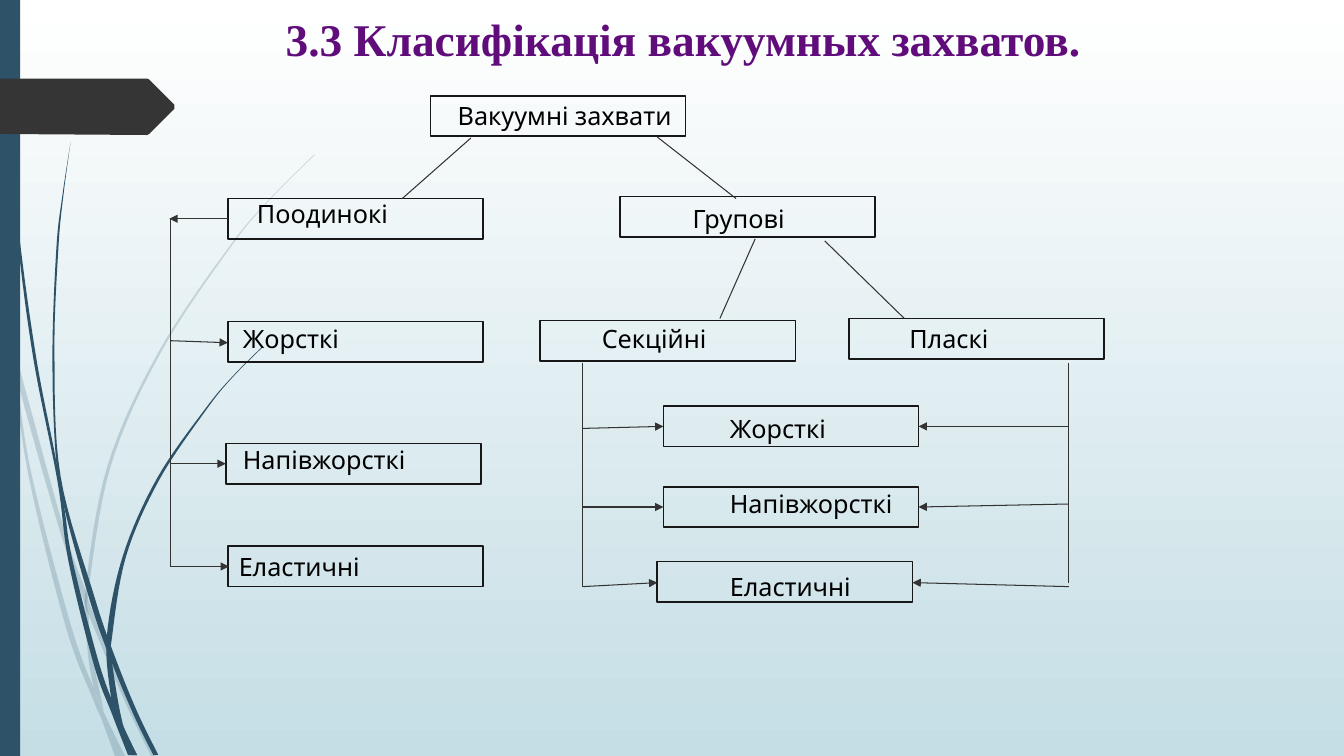
import pptx
import pptx.dml.color
import pptx.enum.shapes
import pptx.enum.text
import pptx.oxml.ns
import pptx.util
from lxml import etree

PX = 9144  # EMU; 100 px to the inch
PAGE_WIDTH, PAGE_HEIGHT = 1333, 750
COLORS = {
    "sky": "FFFFFF", "ground": "C5DEE5", "stem": "2E5369", "tag": "353535",
    "title": "600D7B", "text": "000000", "frame": "171717", "line": "333333",
}
TITLE = "3.3 Класифікація вакуумных захватов."
BOX_SIZE = (253, 40)
LABEL_SIZE = (285, 40)

# text, box left and top, label left and top
BOXES = [
    ("Вакуумні захвати", (427, 95), (444, 95)),
    ("Поодинокі", (226, 197), (245, 192)),
    ("Групові", (615, 195), (677, 197)),
    ("Жорсткі", (226, 319), (231, 316)),
    ("Напівжорсткі", (224, 440), (231, 436)),
    ("Еластичні", (226, 542), (227, 542)),
    ("Секційні", (536, 318), (587, 316)),
    ("Пласкі", (842, 316), (892, 316)),
    ("Жорсткі", (658, 403), (714, 405)),
    ("Напівжорсткі", (658, 483), (714, 480)),
    ("Еластичні", (652, 557), (714, 562)),
]
LINES = [
    ((467, 137), (399, 197)), ((652, 136), (730, 197)),
    ((749, 237), (714, 316)), ((818, 239), (897, 316)),
    ((169, 217), (169, 562)), ((578, 360), (578, 582)), ((1060, 360), (1060, 578)),
]
ARROWS = [
    ((226, 217), (168, 217)),
    ((169, 338), (226, 340)), ((169, 460), (224, 460)), ((169, 562), (227, 562)),
    ((578, 425), (658, 423)), ((578, 503), (658, 503)), ((578, 582), (652, 578)),
    ((1060, 423), (911, 423)), ((1060, 500), (911, 503)), ((1060, 582), (905, 578)),
]

# each stem: one edge downwards, the other edge upwards
PALE_STEMS = [
    ([(14, 345), (17, 376), (58, 522), (84, 599), (88, 610), (123, 694), (150, 750)],
     [(155, 750), (127, 692), (92, 607), (85, 586), (62, 520), (14, 345)]),
    ([(11, 350), (28, 470), (65, 621), (92, 693), (101, 714), (114, 750)],
     [(124, 750), (105, 711), (93, 683), (70, 619), (31, 469), (17, 376)]),
    ([(312, 153), (268, 197), (228, 244), (158, 348), (107, 461), (85, 584),
      (87, 646), (93, 683)],
     [(103, 706), (91, 646), (88, 610), (88, 584), (110, 462), (160, 349),
      (229, 245), (268, 198), (312, 154)]),
]
DARK_STEMS = [
    ([(3, 0), (7, 110), (17, 233), (33, 355), (57, 477), (68, 557), (93, 659),
      (111, 708), (127, 749)],
     [(136, 749), (116, 706), (98, 657), (72, 556), (64, 505), (55, 453),
      (36, 355), (19, 232), (8, 109), (4, 0)]),
    ([(70, 141), (62, 193), (56, 245), (52, 349), (55, 449), (64, 505), (88, 592),
      (106, 645), (132, 708), (152, 749)],
     [(157, 749), (136, 706), (113, 649), (93, 590), (60, 472), (54, 349),
      (58, 245), (63, 193), (70, 141)]),
    ([(260, 344), (231, 373), (204, 405), (156, 474), (122, 551), (106, 631),
      (110, 691), (117, 722), (130, 749)],
     [(136, 749), (122, 719), (111, 656), (111, 633), (125, 552), (158, 476),
      (205, 406), (231, 374), (261, 344)]),
]
TAG = [(0, 78), (146, 78), (148, 79), (173, 104), (173, 108), (148, 133), (146, 134), (0, 133)]


def color(name):
    return pptx.dml.color.RGBColor.from_string(COLORS[name])


def emu(*lengths):
    return [round(length * PX) for length in lengths]


def smooth_edge(points, steps=8):
    """Return points along a Catmull-Rom curve through the given points."""
    padded = [points[0], *points, points[-1]]
    curve = []
    for a, b, c, d in zip(padded, padded[1:], padded[2:], padded[3:]):
        for step in range(steps):
            t = step / steps
            curve.append(tuple(
                (2 * q + (r - p) * t + (2 * p - 5 * q + 4 * r - s) * t ** 2
                 + (3 * q - p - 3 * r + s) * t ** 3) / 2
                for p, q, r, s in zip(a, b, c, d)))
    return curve + [points[-1]]


def paint(shape, fill):
    shape.shadow.inherit = False
    shape.fill.solid()
    shape.fill.fore_color.rgb = color(fill)
    shape.line.fill.background()


def add_outline(page, points, fill, alpha=None):
    corners = [emu(*point) for point in points]
    builder = page.shapes.build_freeform(*corners[0], scale=1.0)
    builder.add_line_segments(corners[1:], close=True)
    shape = builder.convert_to_shape()
    paint(shape, fill)
    if alpha:
        tint = next(shape._element.spPr.iter(pptx.oxml.ns.qn("a:srgbClr")))
        etree.SubElement(tint, pptx.oxml.ns.qn("a:alpha"), val=str(alpha * 1000))


def add_line(page, start, end, arrow=False):
    line = page.shapes.add_connector(
        pptx.enum.shapes.MSO_CONNECTOR.STRAIGHT, *emu(*start, *end))
    line.line.color.rgb = color("line")
    line.line.width = pptx.util.Pt(0.75)
    if arrow:
        etree.SubElement(line.line._get_or_add_ln(),
                         pptx.oxml.ns.qn("a:tailEnd"), type="triangle")
    etree.SubElement(line._element.spPr, pptx.oxml.ns.qn("a:effectLst"))


def add_frame(page, place):
    frame = page.shapes.add_shape(
        pptx.enum.shapes.MSO_SHAPE.RECTANGLE, *emu(*place, *BOX_SIZE))
    frame.shadow.inherit = False
    frame.fill.background()
    frame.line.color.rgb = color("frame")
    frame.line.width = pptx.util.Pt(1.25)


def add_label(page, text, place):
    label = page.shapes.add_textbox(*emu(*place, *LABEL_SIZE))
    label.text_frame.word_wrap = True
    para = label.text_frame.paragraphs[0]
    para.text = text
    para.font.name = "League Spartan"
    para.font.size = pptx.util.Pt(18)
    para.font.color.rgb = color("text")


def set_title(page):
    title = page.shapes.title
    title.left, title.top, title.width, title.height = emu(131, 0, 1093, 95)
    frame = title.text_frame
    frame.vertical_anchor = pptx.enum.text.MSO_ANCHOR.TOP
    frame.margin_top = 11 * PX
    para = frame.paragraphs[0]
    para.text = TITLE
    para.alignment = pptx.enum.text.PP_ALIGN.CENTER
    para.font.name = "Times New Roman"
    para.font.size = pptx.util.Pt(32.4)
    para.font.bold = True
    para.font.color.rgb = color("title")


def set_background(page):
    fill = page.background.fill
    fill.gradient()
    fill.gradient_angle = 270
    for stop, position, name in zip(fill.gradient_stops, (0, 1), ("sky", "ground")):
        stop.position = position
        stop.color.rgb = color(name)


def main():
    deck = pptx.Presentation()
    deck.slide_width, deck.slide_height = emu(PAGE_WIDTH, PAGE_HEIGHT)
    page = deck.slides.add_slide(deck.slide_layouts.get_by_name("Title Only"))
    set_background(page)
    set_title(page)
    for stems, alpha in ((PALE_STEMS, 20), (DARK_STEMS, None)):
        for down, up in stems:
            add_outline(page, smooth_edge(down) + smooth_edge(up), "stem", alpha)
    bar = page.shapes.add_shape(
        pptx.enum.shapes.MSO_SHAPE.RECTANGLE, *emu(0, 0, 20, PAGE_HEIGHT))
    paint(bar, "stem")
    add_outline(page, TAG, "tag")
    for text, box_place, label_place in BOXES:
        add_frame(page, box_place)
        add_label(page, text, label_place)
    for start, end in LINES:
        add_line(page, start, end)
    for start, end in ARROWS:
        add_line(page, start, end, arrow=True)
    deck.save("out.pptx")


if __name__ == "__main__":
    main()
